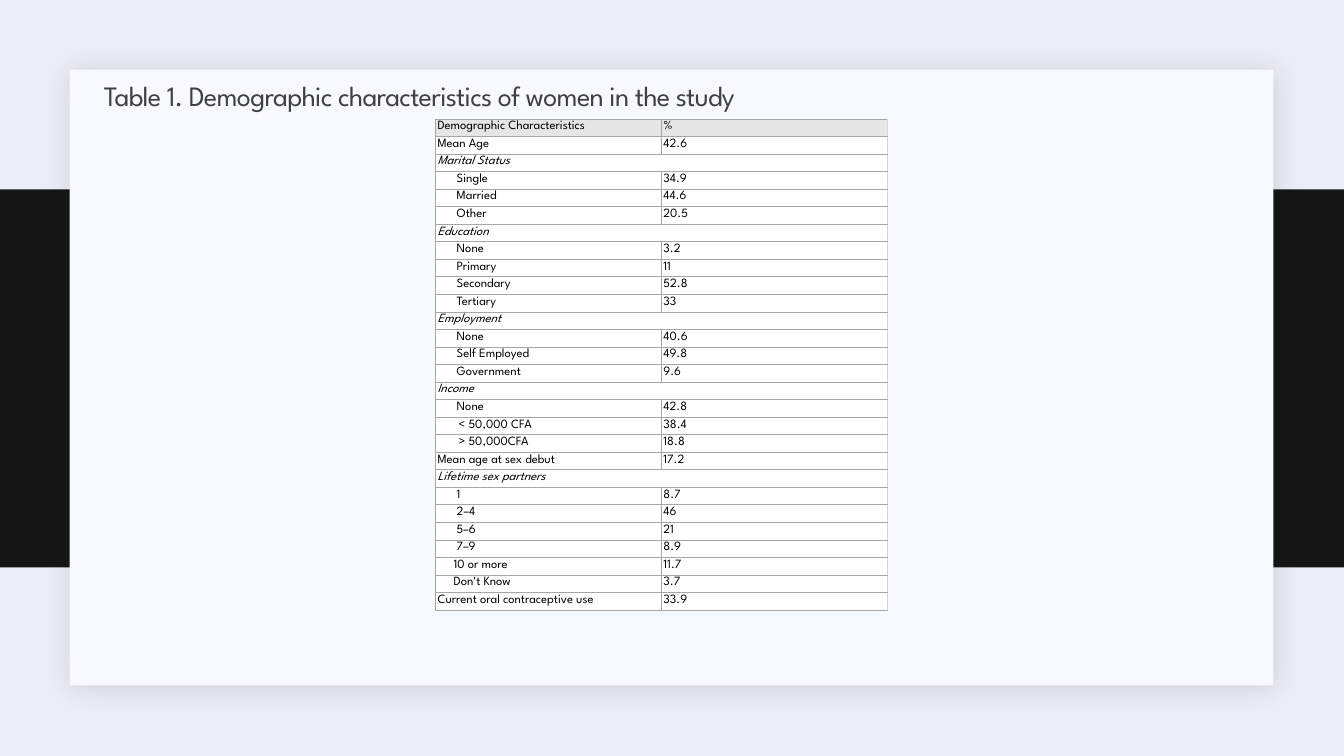
import dataclasses

import lxml.etree
import pptx
import pptx.dml.color
import pptx.enum.shapes
import pptx.enum.text
import pptx.oxml.ns
import pptx.util

Inches = pptx.util.Inches
Pt = pptx.util.Pt
RGBColor = pptx.dml.color.RGBColor

BACKDROP = RGBColor(0xEC, 0xEE, 0xF7)
BAND = RGBColor(0x14, 0x15, 0x14)
PANEL = RGBColor(0xF6, 0xF9, 0xFF)
SHADOW = RGBColor(0x1F, 0x21, 0x25)
HEADING = RGBColor(0x40, 0x40, 0x40)
INK = RGBColor(0x00, 0x00, 0x00)
HEADER_FILL = RGBColor(0xE6, 0xE6, 0xE6)
ROW_FILL = RGBColor(0xFF, 0xFF, 0xFF)
RULE = RGBColor(0xA6, 0xA6, 0xA6)
EDGE = RGBColor(0xD5, 0xD5, 0xD5)
FONT = "League Spartan"
TABLE_HEIGHT = 4.88


@dataclasses.dataclass(frozen=True)
class Entry:
    """One table row; without a percentage it is a section heading."""

    label: str
    percent: str = ""
    indent: float = 0


ENTRIES = [
    Entry("Demographic Characteristics", "%"),
    Entry("Mean Age", "42.6"),
    Entry("Marital Status"),
    Entry("Single", "34.9", 0.19),
    Entry("Married", "44.6", 0.19),
    Entry("Other", "20.5", 0.19),
    Entry("Education"),
    Entry("None", "3.2", 0.19),
    Entry("Primary", "11", 0.19),
    Entry("Secondary", "52.8", 0.19),
    Entry("Tertiary", "33", 0.19),
    Entry("Employment"),
    Entry("None", "40.6", 0.19),
    Entry("Self Employed", "49.8", 0.19),
    Entry("Government", "9.6", 0.19),
    Entry("Income"),
    Entry("None", "42.8", 0.19),
    Entry("< 50,000 CFA", "38.4", 0.21),
    Entry("> 50,000CFA", "18.8", 0.21),
    Entry("Mean age at sex debut", "17.2"),
    Entry("Lifetime sex partners"),
    Entry("1", "8.7", 0.19),
    Entry("2–4", "46", 0.19),
    Entry("5–6", "21", 0.19),
    Entry("7–9", "8.9", 0.19),
    Entry("10 or more", "11.7", 0.16),
    Entry("Don't Know", "3.7", 0.16),
    Entry("Current oral contraceptive use", "33.9"),
]


def add_child(parent, tag: str, **attributes):
    """Append a DrawingML element and return it."""
    return lxml.etree.SubElement(parent, pptx.oxml.ns.qn(tag), attributes)


def add_block(slide, left: float, top: float, width: float, height: float, color: RGBColor):
    """Draw a plain filled rectangle."""
    block = slide.shapes.add_shape(
        pptx.enum.shapes.MSO_SHAPE.RECTANGLE,
        Inches(left), Inches(top), Inches(width), Inches(height))
    block.shadow.inherit = False
    block.fill.solid()
    block.fill.fore_color.rgb = color
    block.line.fill.background()
    return block


def cast_shadow(block) -> None:
    """Give a block a soft outer shadow."""
    effects = block.element.spPr.find(pptx.oxml.ns.qn("a:effectLst"))
    outer = add_child(effects, "a:outerShdw", blurRad=str(Pt(20)), dist=str(Pt(2)),
                      dir="2700000", algn="ctr", rotWithShape="0")
    add_child(add_child(outer, "a:srgbClr", val=str(SHADOW)), "a:alpha", val="15000")


def write(paragraph, text: str, size: float, color: RGBColor, italic: bool = False):
    """Add one formatted run to a paragraph."""
    run = paragraph.add_run()
    run.text = text
    run.font.name = FONT
    run.font.size = Pt(size)
    run.font.color.rgb = color
    run.font.italic = italic
    return run


def style_cell(cell, fill: RGBColor, right_edge: RGBColor) -> None:
    """Set the margins, borders and fill of a cell."""
    cell.margin_left = cell.margin_right = Inches(0.02)
    cell.margin_top = cell.margin_bottom = Inches(0.02)
    properties = cell._tc.get_or_add_tcPr()
    for side, color in (("L", RULE), ("R", right_edge), ("T", RULE), ("B", RULE)):
        border = add_child(properties, f"a:ln{side}", w=str(Pt(0.6)))
        add_child(add_child(border, "a:solidFill"), "a:srgbClr", val=str(color))
    cell.fill.solid()
    cell.fill.fore_color.rgb = fill


def add_title(slide) -> None:
    """Place and write the slide title above the panel."""
    title = slide.shapes.title
    slide.shapes.element.append(title.element)
    title.left, title.top = Inches(0.93), Inches(0.65)
    title.width, title.height = Inches(11.27), Inches(0.64)
    title.text_frame.vertical_anchor = pptx.enum.text.MSO_ANCHOR.MIDDLE
    heading = title.text_frame.paragraphs[0]
    heading.alignment = pptx.enum.text.PP_ALIGN.LEFT
    heading.line_spacing = 0.9
    run = write(heading, "Table 1. Demographic characteristics of women in the study", 20, HEADING)
    run.font._element.set("spc", "-50")


def add_demographics(slide) -> None:
    """Build the table of demographic characteristics."""
    table = slide.shapes.add_table(
        len(ENTRIES), 2, Inches(4.32), Inches(1.18), Inches(4.48), Inches(TABLE_HEIGHT)).table
    table.horz_banding = False
    for index, entry in enumerate(ENTRIES):
        table.rows[index].height = Inches(TABLE_HEIGHT / len(ENTRIES))
        label, percent = table.cell(index, 0), table.cell(index, 1)
        fill = ROW_FILL if index else HEADER_FILL
        is_section = not entry.percent
        style_cell(label, fill, EDGE if is_section else RULE)
        style_cell(percent, fill, EDGE)
        caption = label.text_frame.paragraphs[0]
        write(caption, entry.label, 9, INK, is_section)
        if entry.indent:
            caption._p.get_or_add_pPr().set("marL", str(Inches(entry.indent)))
        if is_section:
            label.merge(percent)
        else:
            write(percent.text_frame.paragraphs[0], entry.percent, 9, INK)


def main() -> None:
    """Build and save the slide."""
    deck = pptx.Presentation()
    deck.slide_width, deck.slide_height = Inches(13.33), Inches(7.5)
    slide = deck.slides.add_slide(deck.slide_layouts[5])
    slide.background.fill.solid()
    slide.background.fill.fore_color.rgb = BACKDROP
    add_block(slide, 0, 1.88, 13.33, 3.75, BAND)
    cast_shadow(add_block(slide, 0.69, 0.69, 11.94, 6.11, PANEL))
    add_title(slide)
    add_demographics(slide)
    deck.save("out.pptx")


if __name__ == "__main__":
    main()
